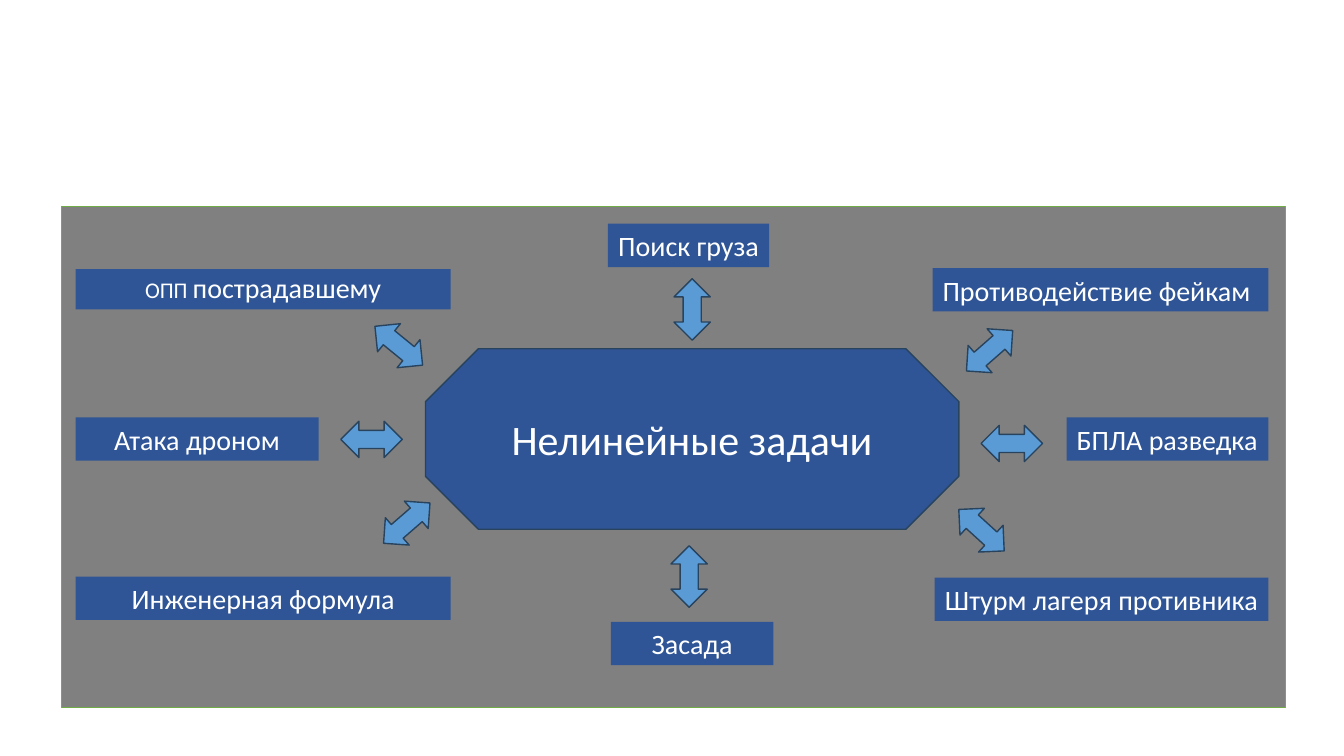
from pptx import Presentation
from pptx.dml.color import RGBColor
from pptx.enum import shapes, text
from pptx.util import Inches, Pt

COLORS = {"panel": "808080", "green": "70AD47", "navy": "2F5597",
          "edge": "27435D", "sky": "5B9BD5", "white": "FFFFFF"}
KIND = shapes.MSO_SHAPE
ALIGN = text.PP_ALIGN
ANCHOR = text.MSO_ANCHOR


class Board:
    font = {"name": "Calibri", "size": Pt(20)}
    inset = {"margin_left": Inches(0.1), "margin_right": Inches(0.1),
             "margin_top": Inches(0.05), "margin_bottom": Inches(0.05)}

    def __init__(self, slide):
        self.slide = slide

    def shape(self, kind, box, fill, line=None):
        item = self.slide.shapes.add_shape(kind, *map(Inches, box))
        item.shadow.inherit = False
        item.fill.solid()
        item.fill.fore_color.rgb = RGBColor.from_string(COLORS[fill])
        if line:
            item.line.color.rgb = RGBColor.from_string(COLORS[line])
            item.line.width = Pt(1)
        else:
            item.line.fill.background()
        return item

    def letter(self, item, runs, align=ALIGN.CENTER, anchor=ANCHOR.TOP, wrap=True):
        """Fill a shape with one paragraph of (words, size) runs."""
        frame = item.text_frame
        form = {**self.inset, "word_wrap": wrap, "vertical_anchor": anchor}
        for key, value in form.items():
            setattr(frame, key, value)
        para = frame.paragraphs[0]
        para.alignment = align
        for words, size in runs:
            run = para.add_run()
            run.text = words
            for key, value in {**self.font, "size": Pt(size)}.items():
                setattr(run.font, key, value)
            run.font.color.rgb = RGBColor.from_string(COLORS["white"])
        return para

    def label(self, words, left, top, width, align=ALIGN.CENTER, wrap=True):
        item = self.shape(KIND.RECTANGLE, (left, top, width, 0.43), "navy")
        self.letter(item, [(words, 20)], align, wrap=wrap)
        item.text_frame.auto_size = text.MSO_AUTO_SIZE.SHAPE_TO_FIT_TEXT

    def arrow(self, left, top, turn):
        item = self.shape(KIND.LEFT_RIGHT_ARROW, (left, top, 0.61, 0.36),
                          "sky", "edge")
        item.rotation = turn


LABELS = [
    ("Поиск груза", 6.03, 2.22, 1.6, ALIGN.CENTER, False),
    ("Атака дроном", 0.75, 4.14, 2.41),
    ("Штурм лагеря противника", 9.27, 5.73, 3.31, ALIGN.CENTER, False),
    ("Инженерная формула", 0.75, 5.72, 3.72),
    ("БПЛА разведка", 10.58, 4.14, 2, ALIGN.LEFT, False),
    ("Противодействие фейкам", 9.25, 2.66, 3.33, ALIGN.LEFT),
    ("Засада", 6.06, 6.17, 1.61),
]
ARROWS = [
    (9.43, 5.08, 42.4), (3.38, 4.18, 0), (9.73, 4.22, 0), (3.73, 5.01, 319),
    (9.51, 3.3, 318.8), (3.65, 3.25, 39.2), (6.56, 2.89, 90), (6.53, 5.54, 90),
]


def main():
    deck = Presentation()
    deck.slide_width, deck.slide_height = Inches(13.33), Inches(7.5)
    board = Board(deck.slides.add_slide(deck.slide_layouts[6]))

    board.shape(KIND.RECTANGLE, (0.61, 2.05, 12.14, 4.97), "panel", "green")
    aid = board.shape(KIND.RECTANGLE, (0.75, 2.67, 3.72, 0.4), "navy")
    board.letter(aid, [("ОПП ", 16), ("пострадавшему", 20)]).line_spacing = 0.9

    hub = board.shape(KIND.OCTAGON, (4.22, 3.46, 5.29, 1.79), "navy", "edge")
    hub.adjustments[0] = 0.293
    board.letter(hub, [("Нелинейные задачи", 30)], anchor=ANCHOR.MIDDLE)

    for row in LABELS:
        board.label(*row)
    for row in ARROWS:
        board.arrow(*row)
    deck.save("out.pptx")


if __name__ == "__main__":
    main()
